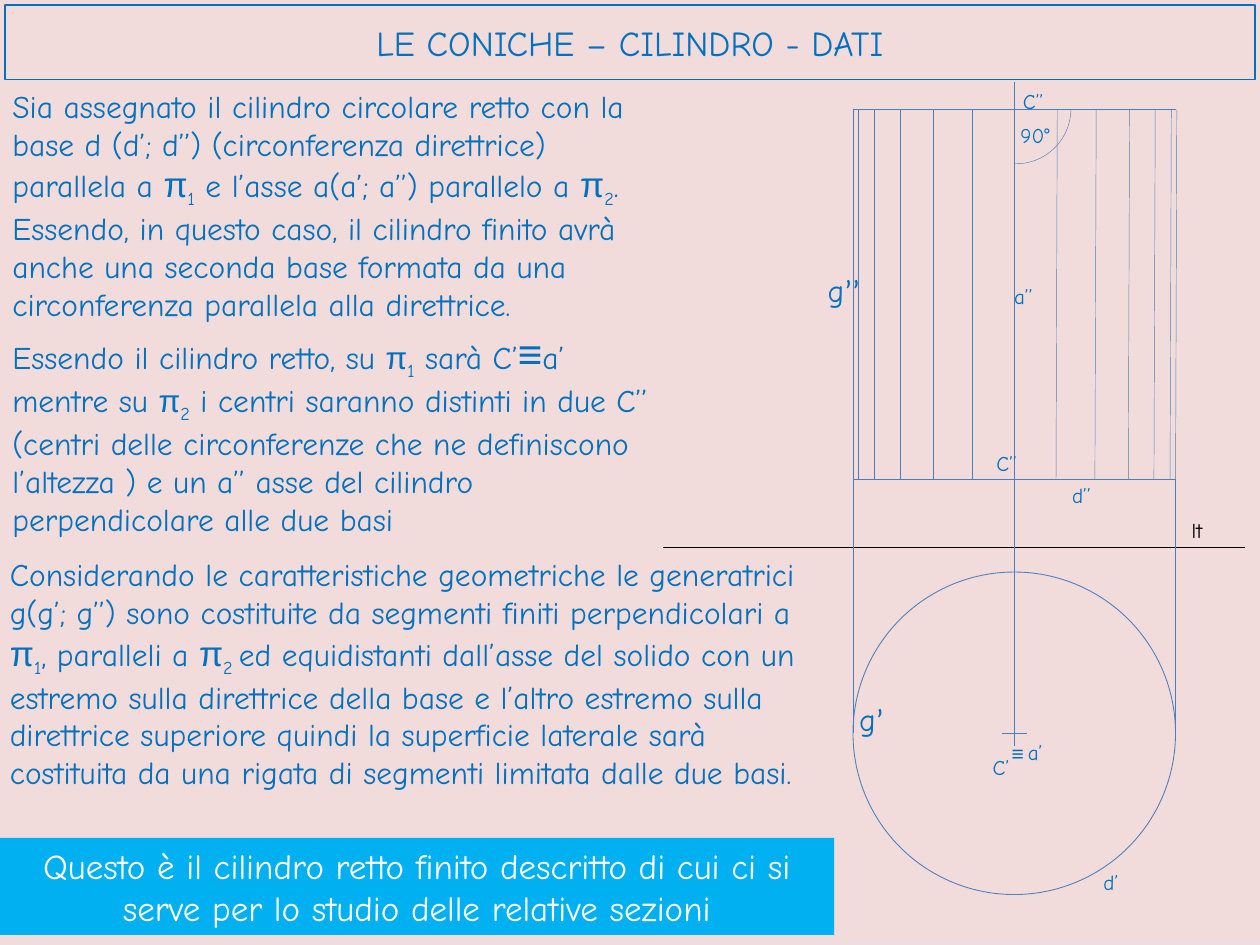
import math

from lxml import etree
from pptx import Presentation
from pptx.dml.color import RGBColor
from pptx.enum import shapes, text
from pptx.oxml import ns
from pptx.util import Inches, Pt

rgb = RGBColor.from_string
BLUE, THIN = "0070C0", "4B7EBC"
FONT = "Comic Neue"
PI_18, PI_20 = ("π", 18, "Arial"), ("π", 20, "Arial")
SUB = -25000


def add_line(x1, y1, x2, y2, color=THIN, width=0.25):
    c = prs.slides[0].shapes.add_connector(
        shapes.MSO_CONNECTOR.STRAIGHT, Inches(x1), Inches(y1), Inches(x2), Inches(y2))
    c.line.color.rgb = rgb(color)
    c.line.width = Pt(width)
    etree.SubElement(c._element.spPr, ns.qn("a:effectLst"))


def write(tf, paragraphs, size, color=BLUE, align=text.PP_ALIGN.LEFT):
    """Fill a frame; a run is (text, size, font, baseline) or a plain string."""
    tf.word_wrap = True
    tf.auto_size = text.MSO_AUTO_SIZE.NONE
    for i, runs in enumerate(paragraphs):
        p = tf.add_paragraph() if i else tf.paragraphs[0]
        p.alignment = align
        for run in runs:
            if isinstance(run, str):
                run = (run,)
            words, pt, font, base = run + (None, size, FONT, 0)[len(run):]
            r = p.add_run()
            r.text = words
            r.font.size = Pt(pt)
            r.font.name = font
            r.font.color.rgb = rgb(color)
            if base:
                r.font._element.set("baseline", str(base))


prs = Presentation()
prs.slide_width, prs.slide_height = Inches(10), Inches(7.5)
s = prs.slides.add_slide(prs.slide_layouts[5])
s.background.fill.solid()
s.background.fill.fore_color.rgb = rgb("F2DCDB")

# Title
title = s.shapes.title
title.left, title.top, title.width, title.height = map(Inches, (0.04, 0.04, 9.92, 0.59))
title.line.color.rgb = rgb(BLUE)
title.line.width = Pt(0.75)
tf = title.text_frame
write(tf, [["LE CONICHE – CILINDRO - DATI"]], 20, align=text.PP_ALIGN.CENTER)
tf.vertical_anchor = text.MSO_ANCHOR.MIDDLE
outline = etree.Element(ns.qn("a:ln"), w=str(Pt(0.75)))
fill = etree.SubElement(outline, ns.qn("a:solidFill"))
etree.SubElement(fill, ns.qn("a:srgbClr"), val=BLUE)
tf.paragraphs[0].runs[0].font._element.insert(0, outline)

# Cylinder: plan (circle) and elevation (rectangle with generatrices)
cx, cy, radius = 8.05, 5.82, 1.28
left, right, top, base = cx - radius, cx + radius, 0.87, 3.8

add_line(5.26, 4.34, 9.88, 4.34, "000000")
circle = s.shapes.add_shape(shapes.MSO_SHAPE.OVAL, Inches(left), Inches(cy - radius),
                            Inches(2 * radius), Inches(2 * radius))
circle.shadow.inherit = False
circle.fill.background()
circle.line.color.rgb = rgb("4F81BD")
circle.line.width = Pt(0.5)

for x in (left, right):
    add_line(x, cy, x, base)
for y in (base, top):
    add_line(left, y, right, y)
add_line(cx, 0.65, cx, cy)
add_line(cx, cy - 0.1, cx, cy + 0.1)
add_line(cx - 0.1, cy, cx + 0.1, cy)

for angle in range(0, 181, 15):
    if angle != 90:
        x = cx - radius * math.cos(math.radians(angle))
        lean = 0.01 if angle > 90 else 0
        add_line(x, base, x + lean, top)

arc = s.shapes.add_shape(shapes.MSO_SHAPE.ARC, Inches(7.63), Inches(0.43),
                         Inches(0.87), Inches(0.87))
arc.adjustments[0], arc.adjustments[1] = 0.219, 54.799
arc.shadow.inherit = False
arc.fill.background()
arc.line.color.rgb = rgb(THIN)
arc.line.width = Pt(0.25)

# Labels of the drawing
labels = [
    ("C’’", 7.81, 3.53, 0.52), ("C’’", 8.02, 0.65, 0.52), ("C’", 7.78, 5.94, 0.35),
    ("lt", 9.36, 4.06, 0.38), ("d’’", 8.41, 3.78, 0.38), ("d’", 8.66, 6.85, 0.36),
    ("a’’", 7.95, 2.2, 0.38), ("a’", 8.06, 5.82, 0.38), ("90°", 8, 0.92, 0.61),
    (("≡", 12, "Arial"), 7.93, 5.83, 0.31),
]
for label, x, y, w in labels:
    tb = s.shapes.add_textbox(Inches(x), Inches(y), Inches(w), Inches(0.3))
    write(tb.text_frame, [[label]], 12, "000000" if label == "lt" else BLUE)

# Explanations and generatrix labels
texts = [
    (0, 0.64, 5.24, 1.95, [
        ["Sia assegnato il cilindro circolare retto con la base d (d’; d’’) "
         "(circonferenza direttrice) parallela a ", PI_20, ("1", 18, FONT, SUB),
         " e l’asse a(a’; a’’) parallelo a ", PI_20, ("2", 18, FONT, SUB), "."],
        ["Essendo, in questo caso, il cilindro finito avrà anche una seconda base "
         "formata da una circonferenza parallela alla direttrice."]]),
    (0, 2.55, 5.34, 1.72, [
        ["Essendo il cilindro retto, su ", PI_18, ("1", 18, FONT, SUB), " sarà C’",
         ("≡", 24, "Arial"), "a’ mentre su ", PI_18, ("2", 18, FONT, SUB),
         " i centri saranno distinti in due C’’ (centri delle circonferenze che ne "
         "definiscono l’altezza ) e un a’’ asse del cilindro perpendicolare alle due basi"]]),
    (-0.02, 4.36, 6.6, 2.26, [
        ["Considerando le caratteristiche geometriche le generatrici g(g’; g’’) sono "
         "costituite da segmenti finiti perpendicolari a ", PI_20, ("1", 18, FONT, SUB),
         ", paralleli a ", PI_20, ("2 ", 18, FONT, SUB),
         "ed equidistanti dall’asse del solido con un estremo sulla direttrice della base "
         "e l’altro estremo sulla direttrice superiore quindi la superficie laterale sarà "
         "costituita da una rigata di segmenti limitata dalle due basi."]]),
    (6.47, 2.1, 0.47, 0.42, [["g", ("’’", 18, "Calibri")]]),
    (6.72, 5.51, 0.44, 0.4, [["g", ("’", 18, "Calibri")]]),
]
for x, y, w, h, paragraphs in texts:
    tb = s.shapes.add_textbox(Inches(x), Inches(y), Inches(w), Inches(h))
    write(tb.text_frame, paragraphs, 18)

# Closing banner
banner = s.shapes.add_shape(shapes.MSO_SHAPE.RECTANGLE, Inches(0), Inches(6.65),
                            Inches(6.62), Inches(0.77))
banner.shadow.inherit = False
banner.fill.solid()
banner.fill.fore_color.rgb = rgb("00B0F0")
banner.line.fill.background()
write(banner.text_frame, [["Questo è il cilindro retto finito descritto di cui ci si "
                           "serve per lo studio delle relative sezioni"]],
      20, "FFFFFF", text.PP_ALIGN.CENTER)
banner.text_frame.vertical_anchor = text.MSO_ANCHOR.TOP
add_line(0.21, 7.48, 10, 7.48, "E6E0EC", 0.75)

prs.save("out.pptx")
